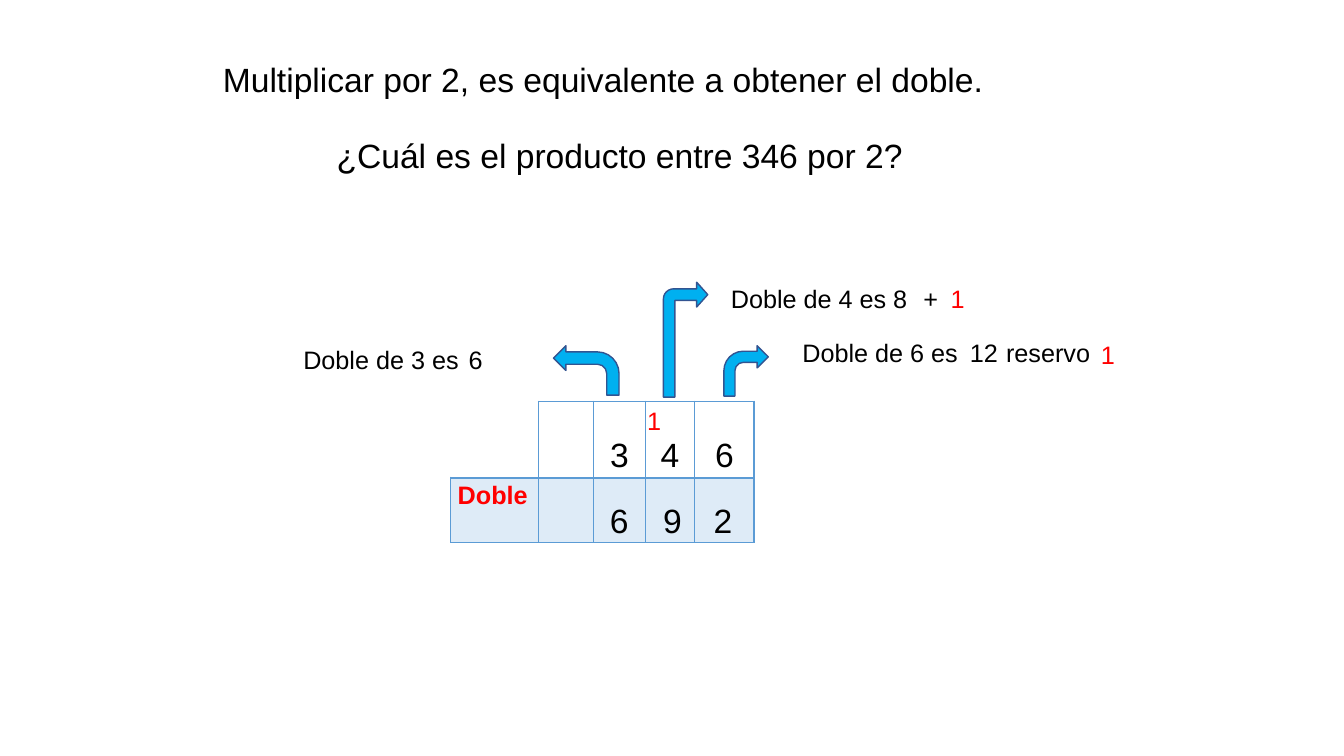
from lxml import etree
from pptx import Presentation
from pptx.dml.color import RGBColor
from pptx.enum.shapes import MSO_SHAPE
from pptx.enum.text import MSO_ANCHOR, MSO_AUTO_SIZE, PP_ALIGN
from pptx.oxml.ns import qn
from pptx.util import Inches, Pt

BENT_ARROW = MSO_SHAPE.BENT_ARROW
TOP, BOTTOM = MSO_ANCHOR.TOP, MSO_ANCHOR.BOTTOM
NO_FIT = MSO_AUTO_SIZE.NONE
LEFT, CENTER = PP_ALIGN.LEFT, PP_ALIGN.CENTER
TITLE_ONLY = 5


def color(value):
    return RGBColor.from_string(value)


class LessonSlide:
    font = "Arial"
    black, red = "000000", "FF0000"
    arrow_fill, arrow_line = "00B0F0", "325491"
    border, result_fill = "5B9BD5", "DEEBF7"

    def __init__(self, presentation):
        self.slide = presentation.slides.add_slide(presentation.slide_layouts[TITLE_ONLY])

    def set_text(self, text_frame, text, size, ink=black, align=LEFT, bold=False, spacing=1.0):
        text_frame.text = text
        paragraph = text_frame.paragraphs[0]
        paragraph.alignment = align
        paragraph.line_spacing = spacing
        paragraph.space_before = Pt(0)
        font = paragraph.runs[0].font
        font.name = self.font
        font.size = Pt(size)
        font.bold = bold
        font.color.rgb = color(ink)

    def title(self, text, left, top, width, height):
        title = self.slide.shapes.title
        title.left, title.top = Inches(left), Inches(top)
        title.width, title.height = Inches(width), Inches(height)
        frame = title.text_frame
        frame.word_wrap = False
        frame.auto_size = NO_FIT
        frame.vertical_anchor = TOP
        self.set_text(frame, text, 24, spacing=1.15)

    def text(self, text, left, top, width, height=0.4, size=18, **style):
        box = self.slide.shapes.add_textbox(
            Inches(left), Inches(top), Inches(width), Inches(height))
        box.text_frame.word_wrap = True
        self.set_text(box.text_frame, text, size, **style)

    def arrow(self, left, top, width, height, adjustments=(), mirrored=False):
        arrow = self.slide.shapes.add_shape(
            BENT_ARROW, Inches(left), Inches(top), Inches(width), Inches(height))
        arrow.shadow.inherit = False
        arrow.fill.solid()
        arrow.fill.fore_color.rgb = color(self.arrow_fill)
        arrow.line.color.rgb = color(self.arrow_line)
        arrow.line.width = Pt(1)
        for index, value in enumerate(adjustments):
            arrow.adjustments[index] = value
        if mirrored:
            arrow.element.spPr.find(qn("a:xfrm")).set("flipH", "1")

    def borders(self, cell, widths):
        properties = cell._tc.get_or_add_tcPr()
        for side in "LRTB":
            if side not in widths:
                continue
            line = etree.SubElement(properties, qn(f"a:ln{side}"), w=str(Pt(widths[side])))
            fill = etree.SubElement(line, qn("a:solidFill"))
            etree.SubElement(fill, qn("a:srgbClr"), val=self.border)

    def table(self, left, top, columns, rows, digits, label):
        table = self.slide.shapes.add_table(
            len(rows), len(columns), Inches(left), Inches(top),
            Inches(sum(columns)), Inches(sum(rows))).table
        table.first_row = table.horz_banding = False
        for column, width in zip(table.columns, columns):
            column.width = Inches(width)
        for row, height in zip(table.rows, rows):
            row.height = Inches(height)
        for index in range(len(columns)):
            upper, lower = table.cell(0, index), table.cell(1, index)
            outer = {"L": 1, "T": 1} if index else {}
            self.borders(upper, {**outer, "R": 1, "B": 2})
            self.borders(lower, {"L": 1, "R": 1, "T": 2, "B": 1})
            upper.fill.background()
            lower.fill.solid()
            lower.fill.fore_color.rgb = color(self.result_fill)
            for cell in (upper, lower):
                cell.margin_left = cell.margin_right = Inches(0.07)
                cell.margin_top = cell.margin_bottom = 0
        first_digit = len(columns) - len(digits)
        for index, digit in enumerate(digits, first_digit):
            cell = table.cell(0, index)
            cell.vertical_anchor = BOTTOM
            cell.margin_bottom = Inches(0.03)
            self.set_text(cell.text_frame, digit, 24, align=CENTER)
        self.set_text(table.cell(1, 0).text_frame, label, 18, self.red, bold=True, spacing=1.15)


def main():
    presentation = Presentation()
    presentation.slide_width, presentation.slide_height = Inches(13.33), Inches(7.5)
    lesson = LessonSlide(presentation)

    lesson.title("Multiplicar por 2, es equivalente a obtener el doble.", 2.11, 0.47, 7.82, 0.53)
    lesson.text("¿Cuál es el producto entre 346 por 2?", 3.24, 1.29, 6, 0.5, 24)
    lesson.table(4.47, 3.98, (0.87, 0.55, 0.51, 0.49, 0.59), (0.76, 0.64), "346", "Doble")

    lesson.arrow(7.18, 3.43, 0.44, 0.5)
    lesson.arrow(6.58, 2.8, 0.44, 1.14, (0.26, 0.28, 0.25, 0.23))
    lesson.arrow(5.49, 3.43, 0.65, 0.49, mirrored=True)

    for text, left, top, width in (
        ("Doble de 6 es", 7.86, 3.3, 1.79),
        ("12", 9.52, 3.3, 0.55),
        ("reservo", 9.88, 3.3, 1.13),
        ("Doble de 4 es", 7.15, 2.76, 1.79),
        ("8", 8.76, 2.76, 0.3),
        ("+", 9.06, 2.76, 0.3),
        ("Doble de 3 es", 2.91, 3.37, 1.74),
        ("6", 4.55, 3.37, 0.44),
    ):
        lesson.text(text, left, top, width)

    lesson.text("1", 9.33, 2.76, 0.3, ink=lesson.red)
    for left, top in ((6.32, 3.93), (10.82, 3.27)):
        lesson.text("1", left, top, 0.3, 0.42, ink=lesson.red, align=CENTER, spacing=1.15)

    for digit, left in (("6", 5.95), ("9", 6.48), ("2", 6.98)):
        lesson.text(digit, left, 4.91, 0.34, 0.5, 24)

    presentation.save("out.pptx")


if __name__ == "__main__":
    main()
